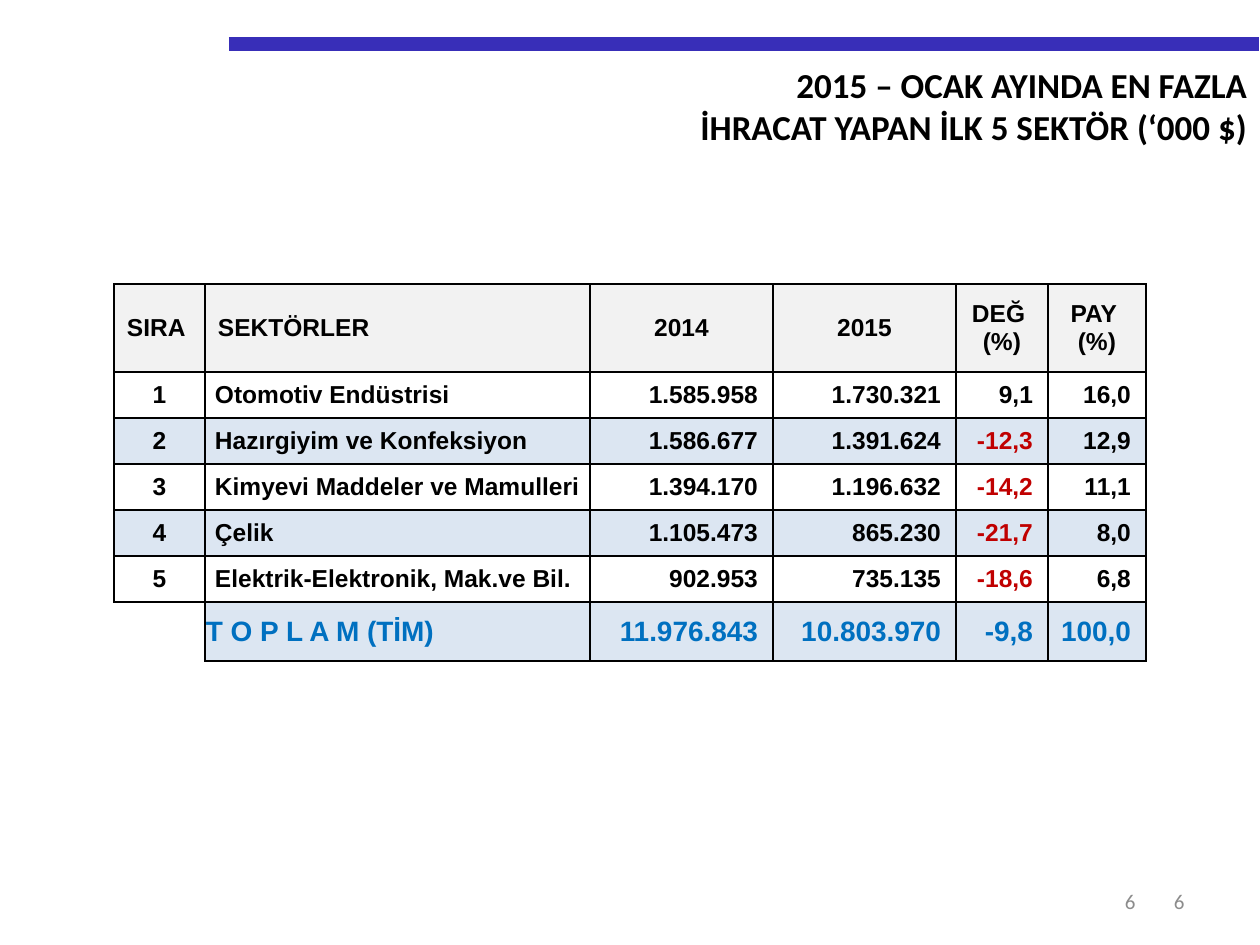
from dataclasses import dataclass

from lxml.etree import SubElement
from pptx import Presentation
from pptx.dml.color import RGBColor
from pptx.enum.shapes import MSO_CONNECTOR
from pptx.enum.text import MSO_ANCHOR, MSO_AUTO_SIZE, PP_ALIGN
from pptx.oxml.ns import qn
from pptx.slide import Slide
from pptx.table import _Cell
from pptx.text.text import TextFrame
from pptx.util import Emu, Pt

EMU_PER_PX = 914400 / 126


def px(length: int) -> Emu:
    return Emu(round(length * EMU_PER_PX))


@dataclass(frozen=True)
class Theme:
    black: str = "000000"
    grey: str = "8C8C8C"
    bar: str = "382EB8"
    loss: str = "C00000"
    total: str = "0070C0"
    header_fill: str = "F2F2F2"
    band_fill: str = "DCE6F2"
    heading_font: str = "Calibri"
    table_font: str = "Arial"
    number_size: int = 12
    cell_size: int = 14
    total_size: int = 16
    title_size: int = 20
    border_width: int = 1


@dataclass(frozen=True)
class TextStyle:
    font: str
    size: int
    color: str
    bold: bool = True
    align: PP_ALIGN = PP_ALIGN.LEFT


@dataclass(frozen=True)
class Insets:
    left: int = 13
    top: int = 6
    right: int = 13
    bottom: int = 6


@dataclass(frozen=True)
class NumberBox:
    left: int
    width: int


THEME = Theme()
DEFAULT_INSETS = Insets()
NAME_INSETS = Insets(10, 1, 1, 0)
TOTAL_NAME_INSETS = Insets(1, 1, 1, 0)
VALUE_INSETS = Insets(1, 1, 15, 0)

TITLE = "2015 – OCAK AYINDA EN FAZLA\nİHRACAT YAPAN İLK 5 SEKTÖR (‘000 $)"
NUMBER_BOXES = (NumberBox(903, 294), NumberBox(883, 265))
COLUMN_WIDTHS = (91, 385, 183, 183, 92, 98)
ROW_HEIGHTS = (88, *[46] * 5, 59)
SECTOR_ROWS = (
    ("SIRA", "SEKTÖRLER", "2014", "2015", "DEĞ \n(%)", "PAY \n(%)"),
    ("1", "Otomotiv Endüstrisi", "1.585.958", "1.730.321", "9,1", "16,0"),
    ("2", "Hazırgiyim ve Konfeksiyon", "1.586.677", "1.391.624", "-12,3", "12,9"),
    ("3", "Kimyevi Maddeler ve Mamulleri", "1.394.170", "1.196.632", "-14,2", "11,1"),
    ("4", "Çelik", "1.105.473", "865.230", "-21,7", "8,0"),
    ("5", "Elektrik-Elektronik, Mak.ve Bil.", "902.953", "735.135", "-18,6", "6,8"),
    ("", "T O P L A M (TİM)", "11.976.843", "10.803.970", "-9,8", "100,0"),
)
TOTAL_ROW = len(SECTOR_ROWS) - 1


def write_text(frame: TextFrame, text: str, style: TextStyle) -> None:
    frame.text = text
    for para in frame.paragraphs:
        para.alignment = style.align
        for span in para.runs:
            span.font.name = style.font
            span.font.size = Pt(style.size)
            span.font.bold = style.bold
            span.font.color.rgb = RGBColor.from_string(style.color)


def add_title(slide: Slide) -> None:
    title = slide.shapes.title
    title.left, title.top, title.width, title.height = map(px, (134, 57, 1126, 97))
    frame = title.text_frame
    frame.word_wrap = True
    frame.auto_size = MSO_AUTO_SIZE.SHAPE_TO_FIT_TEXT
    frame.vertical_anchor = MSO_ANCHOR.TOP
    write_text(frame, TITLE, TextStyle(THEME.heading_font, THEME.title_size,
                                       THEME.black, align=PP_ALIGN.RIGHT))


def add_top_bar(slide: Slide) -> None:
    bar = slide.shapes.add_connector(MSO_CONNECTOR.STRAIGHT,
                                     px(229), px(44), px(1259), px(44))
    bar.line.color.rgb = RGBColor.from_string(THEME.bar)
    bar.line.width = Pt(8.5)
    SubElement(bar._element.spPr, qn("a:effectLst"))


def add_page_number(slide: Slide, place: NumberBox) -> None:
    box = slide.shapes.add_textbox(px(place.left), px(876), px(place.width), px(50))
    box.text_frame.word_wrap = True
    box.text_frame.vertical_anchor = MSO_ANCHOR.MIDDLE
    write_text(box.text_frame, "6", TextStyle(THEME.heading_font, THEME.number_size,
                                              THEME.grey, False, PP_ALIGN.RIGHT))


def set_borders(cell: _Cell, drawn_sides: str) -> None:
    """Draw the sides named by the letters L, R, T and B, and clear the others."""
    properties = cell._tc.get_or_add_tcPr()
    for side in "LRTB":
        border = SubElement(properties, qn(f"a:ln{side}"), w=str(Pt(THEME.border_width)))
        if side in drawn_sides:
            fill = SubElement(border, qn("a:solidFill"))
            SubElement(fill, qn("a:srgbClr"), val=THEME.black)
        else:
            SubElement(border, qn("a:noFill"))


def cell_style(row: int, column: int, text: str) -> TextStyle:
    if row == 0:
        align = PP_ALIGN.LEFT if column < 2 else PP_ALIGN.CENTER
    else:
        align = {0: PP_ALIGN.CENTER, 1: PP_ALIGN.LEFT}.get(column, PP_ALIGN.RIGHT)
    if row == TOTAL_ROW:
        return TextStyle(THEME.table_font, THEME.total_size, THEME.total, align=align)
    color = THEME.loss if text.startswith("-") else THEME.black
    return TextStyle(THEME.table_font, THEME.cell_size, color, align=align)


def cell_insets(row: int, column: int) -> Insets:
    if row == 0 or column == 0:
        return DEFAULT_INSETS
    if column > 1:
        return VALUE_INSETS
    return TOTAL_NAME_INSETS if row == TOTAL_ROW else NAME_INSETS


def format_cell(cell: _Cell, row: int, column: int, text: str) -> None:
    insets = cell_insets(row, column)
    cell.margin_left, cell.margin_right = px(insets.left), px(insets.right)
    cell.margin_top, cell.margin_bottom = px(insets.top), px(insets.bottom)
    cell.vertical_anchor = MSO_ANCHOR.MIDDLE
    set_borders(cell, "LRTB" if text else "TR")
    if text and row % 2 == 0:
        cell.fill.solid()
        fill = THEME.header_fill if row == 0 else THEME.band_fill
        cell.fill.fore_color.rgb = RGBColor.from_string(fill)
    else:
        cell.fill.background()
    if text:
        write_text(cell.text_frame, text, cell_style(row, column, text))


def add_sector_table(slide: Slide) -> None:
    table = slide.shapes.add_table(
        len(ROW_HEIGHTS), len(COLUMN_WIDTHS), px(114), px(284),
        px(sum(COLUMN_WIDTHS)), px(sum(ROW_HEIGHTS))).table
    table.first_row = table.horz_banding = False
    for column, width in zip(table.columns, COLUMN_WIDTHS):
        column.width = px(width)
    for row, height in zip(table.rows, ROW_HEIGHTS):
        row.height = px(height)
    for row_index, texts in enumerate(SECTOR_ROWS):
        for column_index, text in enumerate(texts):
            format_cell(table.cell(row_index, column_index), row_index, column_index, text)


def main() -> None:
    deck = Presentation()
    deck.slide_width, deck.slide_height = px(1260), px(945)
    page = deck.slides.add_slide(deck.slide_layouts[5])
    add_top_bar(page)
    for place in NUMBER_BOXES:
        add_page_number(page, place)
    add_title(page)
    add_sector_table(page)
    deck.save("out.pptx")


if __name__ == "__main__":
    main()
